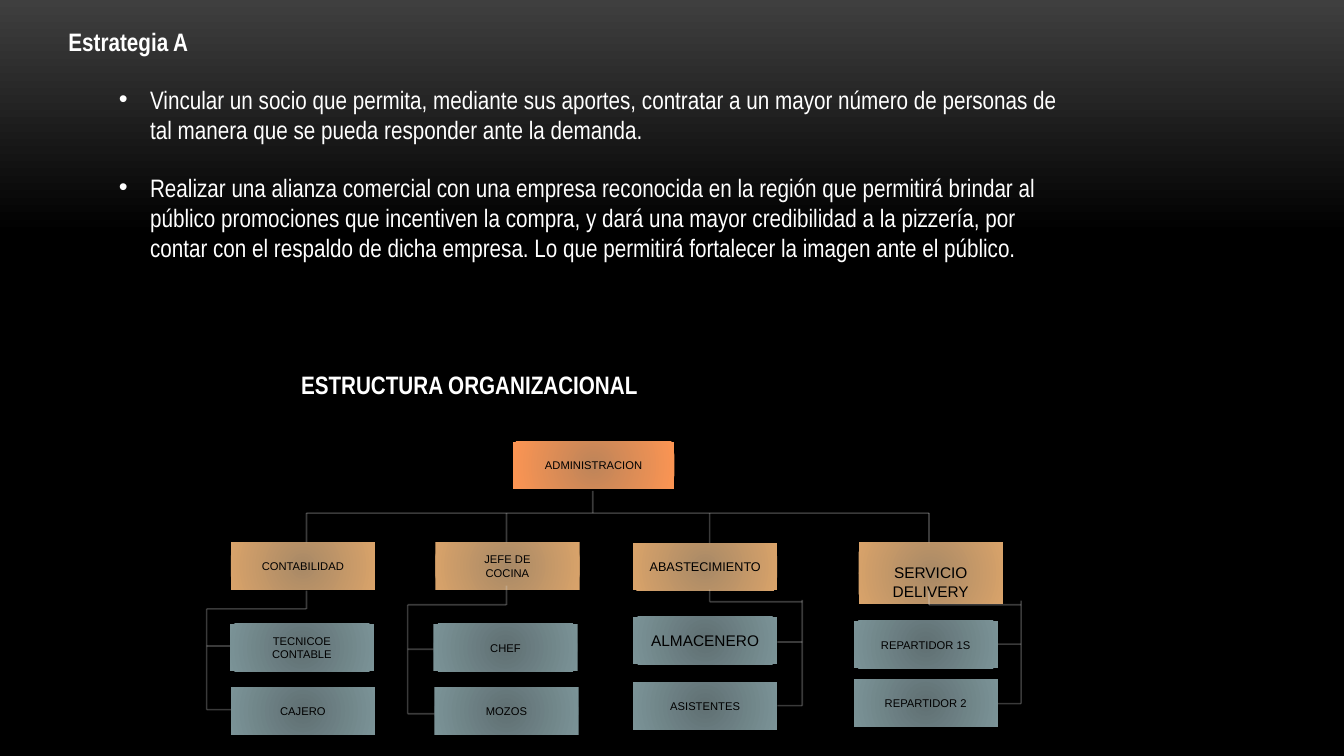
from lxml.etree import SubElement
from pptx import Presentation
from pptx.dml.color import RGBColor
from pptx.enum.shapes import MSO_CONNECTOR, MSO_SHAPE
from pptx.enum.text import MSO_ANCHOR, PP_ALIGN
from pptx.oxml import parse_xml
from pptx.oxml.ns import nsdecls, qn
from pptx.util import Pt

WIDE, HIGH = 103, 33.8
BUS = 366.5
AMBER = ("A88966", "D9A36A")
SLATE = ("607073", "7B9397")
CENTER = ('<a:path path="circle"><a:fillToRect l="100000" t="100000" '
          'r="100000" b="100000"/></a:path>')
DOWN = '<a:lin ang="5400000" scaled="0"/>'

POINTS = [
    "Vincular un socio que permita, mediante sus aportes, contratar a un mayor "
    "número de personas de tal manera que se pueda responder ante la demanda.",
    "Realizar una alianza comercial con una empresa reconocida en la región que "
    "permitirá brindar al público promociones que incentiven la compra, y dará una "
    "mayor credibilidad a la pizzería, por contar con el respaldo de dicha empresa. "
    "Lo que permitirá fortalecer la imagen ante el público.",
]

# Each area: head (lines, x, y, height, size, top inset), stem (x, start y),
# rail (x, top, elbow y), staff (lines, x, y, size, tick y)
AREAS = [
    ((["CONTABILIDAD"], 164.9, 387.4, HIGH, 8, 3.6), (218.9, 421.9),
     (147.6, 434.9, 434.9),
     [(["TECNICOE", "CONTABLE"], 164.2, 445.7, 8, 461.5),
      (["CAJERO"], 164.9, 491, 8, 506.9)]),
    ((["JEFE DE", "COCINA"], 311, 387.4, HIGH, 8, 3.6), (361.8, 418.3),
     (291.2, 432, 432),
     [(["CHEF"], 309.6, 445.7, 8, 463.7),
      (["MOZOS"], 310.3, 491, 8, 509.8)]),
    ((["ABASTECIMIENTO"], 452.2, 388, HIGH, 9, 3.6), (506.9, 421.2),
     (573.1, 428.4, 429.8),
     [(["ALMACENERO"], 452.2, 440.6, 11, 458.6),
      (["ASISTENTES"], 452.2, 487.4, 8, 504)]),
    ((["SERVICIO", "DELIVERY"], 613.4, 387.4, 43.9, 11, 16.2), (663.6, 421.9),
     (729.4, 429.1, 432),
     [(["REPARTIDOR 1S"], 609.8, 443.5, 8, 460.1),
      (["REPARTIDOR 2"], 609.8, 485.3, 8, 502.6)]),
]


def tint(code):
    return RGBColor.from_string(code)


def grade(root, stops, tail):
    """Swap the first solid fill under root for a gradient."""
    marks = "".join(f'<a:gs pos="{pos * 1000}"><a:srgbClr val="{code}"/></a:gs>'
                    for pos, code in stops)
    old = root.find(".//" + qn("a:solidFill"))
    new = parse_xml(f'<a:gradFill {nsdecls("a")} rotWithShape="1">'
                    f'<a:gsLst>{marks}</a:gsLst>{tail}</a:gradFill>')
    old.getparent().replace(old, new)


def text(frame, lines, font="Arial", size=8, color="000000", bold=False,
         align=PP_ALIGN.LEFT, gap=0, bullet=False):
    """Add one paragraph per line to the frame."""
    for line in lines:
        para = frame.add_paragraph() if frame.text else frame.paragraphs[0]
        if bullet:
            props = para._p.get_or_add_pPr()
            props.set("marL", str(Pt(58.3)))
            props.set("indent", str(-Pt(22.3)))
            SubElement(props, qn("a:buFont"), typeface="Arial")
            SubElement(props, qn("a:buChar"), char="•")
        para.alignment = align
        if gap:
            para.space_before = Pt(gap)
        run = para.add_run()
        run.text = line
        run.font.name, run.font.size, run.font.bold = font, Pt(size), bold
        run.font.color.rgb = tint(color)


def area(slide, x, y, wide, high):
    frame = slide.shapes.add_textbox(Pt(x), Pt(y), Pt(wide), Pt(high)).text_frame
    frame.word_wrap = True
    return frame


def box(slide, lines, x, y, wide, high, hues, size=8, top=3.6):
    shape = slide.shapes.add_shape(MSO_SHAPE.RECTANGLE, Pt(x), Pt(y), Pt(wide), Pt(high))
    shape.shadow.inherit = False
    shape.line.fill.background()
    shape.fill.solid()
    grade(shape.element, zip((0, 100), hues), CENTER)
    frame = shape.text_frame
    frame.word_wrap = True
    frame.vertical_anchor = MSO_ANCHOR.MIDDLE
    frame.margin_top = Pt(top)
    text(frame, lines, size=size, align=PP_ALIGN.CENTER)


def link(slide, x1, y1, x2, y2):
    line = slide.shapes.add_connector(MSO_CONNECTOR.STRAIGHT,
                                      Pt(x1), Pt(y1), Pt(x2), Pt(y2))
    line.line.width = Pt(1.2)
    line.line.color.rgb = tint("E1E1E1")
    props = line.element.spPr
    SubElement(props.find(".//" + qn("a:srgbClr")), qn("a:alpha"), val="25000")
    SubElement(props, qn("a:effectLst"))


def chart(slide):
    # Boxes
    box(slide, ["ADMINISTRACION"], 366.5, 315.4, 115.2, HIGH, ("BE8459", "FC9553"))
    for (lines, x, y, high, size, top), _, _, staff in AREAS:
        box(slide, lines, x, y, WIDE, high, AMBER, size, top)
        for lines, x, y, size, _ in staff:
            box(slide, lines, x, y, WIDE, HIGH, SLATE, size)

    # Main branch
    link(slide, 423.4, 350.6, 423.4, BUS)
    link(slide, AREAS[0][1][0], BUS, AREAS[-1][1][0], BUS)

    # Branch of each area
    for head, (stem, start), (rail, top, elbow), staff in AREAS:
        link(slide, stem, BUS, stem, head[2])
        link(slide, stem, start, stem, elbow)
        link(slide, stem, elbow, rail, elbow)
        link(slide, rail, top, rail, staff[-1][-1])
        for _, x, _, _, tick in staff:
            edge = x if rail < x else x + WIDE
            link(slide, rail, tick, edge, tick)


def main():
    deck = Presentation()
    deck.slide_width, deck.slide_height = Pt(960), Pt(540)
    slide = deck.slides.add_slide(deck.slide_layouts[6])

    # Background
    slide.background.fill.solid()
    grade(slide.element, [(0, "3F3F3F"), (31, "000000"), (100, "000000")], DOWN)

    # Strategy text
    style = dict(font="Arial Narrow", size=18, color="FFFFFF")
    frame = area(slide, 41.8, 15.1, 725.8, 198.7)
    text(frame, ["Estrategia A"], bold=True, **style)
    text(frame, POINTS, gap=19.7, bullet=True, **style)

    # Organisation chart
    frame = area(slide, 208, 260.6, 415.4, 51.1)
    text(frame, ["ESTRUCTURA ORGANIZACIONAL"], bold=True, **style)
    chart(slide)

    deck.save("out.pptx")


if __name__ == "__main__":
    main()
